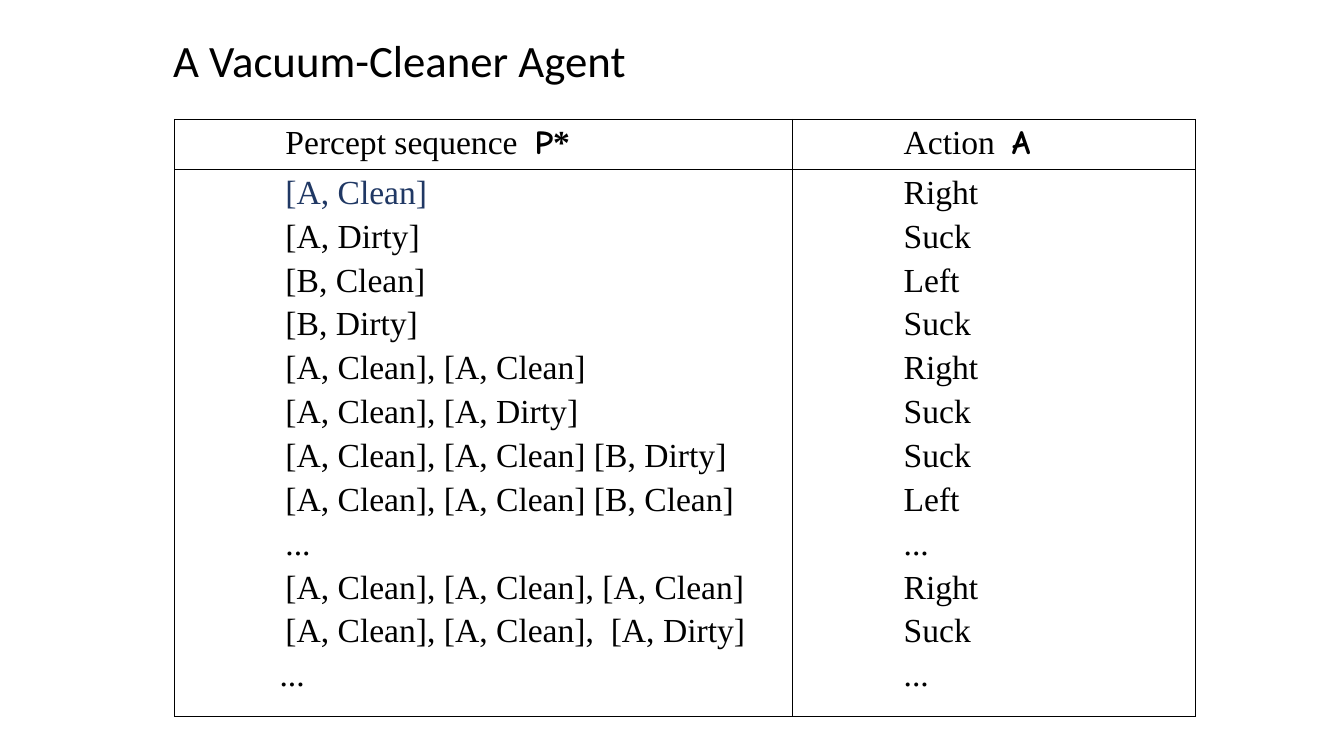
from lxml import etree
from pptx import Presentation
from pptx.dml.color import RGBColor
from pptx.enum.text import MSO_ANCHOR, PP_ALIGN
from pptx.oxml.ns import qn
from pptx.util import Cm, Pt

LEFT = PP_ALIGN.LEFT
MIDDLE = MSO_ANCHOR.MIDDLE
TITLE_ONLY = 5
COLORS = {"ink": "000000", "paper": "FFFFFF", "accent": "203864"}
SERIF, COMIC = "Times New Roman", "Comic Neue"
INDENT = 2.54
HEADINGS = [
    [("Percept sequence  ", SERIF, False), ("P", COMIC, True), ("*", SERIF, True)],
    [("Action  ", SERIF, False), ("A", COMIC, True)],
]
RULES = [
    ("[A, Clean]", "Right"),
    ("[A, Dirty]", "Suck"),
    ("[B, Clean]", "Left"),
    ("[B, Dirty]", "Suck"),
    ("[A, Clean], [A, Clean]", "Right"),
    ("[A, Clean], [A, Dirty]", "Suck"),
    ("[A, Clean], [A, Clean] [B, Dirty]", "Suck"),
    ("[A, Clean], [A, Clean] [B, Clean]", "Left"),
    ("...", "..."),
    ("[A, Clean], [A, Clean], [A, Clean]", "Right"),
    ("[A, Clean], [A, Clean],  [A, Dirty]", "Suck"),
    ("...", "..."),
]


def add_span(para, text, font=SERIF, size=24, color="ink", bold=False):
    """Append formatted text to a paragraph."""
    span = para.add_run()
    span.text = text
    span.font.name = font
    span.font.size = Pt(size)
    span.font.bold = bold
    span.font.color.rgb = RGBColor.from_string(COLORS[color])


def indent_paragraph(para, indent=INDENT):
    """Indent a table paragraph and set the gap below it."""
    para.alignment = LEFT
    para.space_after = Pt(4.8)
    properties = para._p.get_or_add_pPr()
    properties.set("marL", str(Cm(indent)))
    properties.set("indent", "0")


def frame_cell(cell):
    """Give a cell thin borders and a plain fill."""
    properties = cell._tc.get_or_add_tcPr()
    for side in ("lnL", "lnR", "lnT", "lnB"):
        line = etree.SubElement(properties, qn(f"a:{side}"), w=str(Pt(1)))
        fill = etree.SubElement(line, qn("a:solidFill"))
        etree.SubElement(fill, qn("a:srgbClr"), val=COLORS["ink"])
    cell.fill.solid()
    cell.fill.fore_color.rgb = RGBColor.from_string(COLORS["paper"])


def place_title(page, left, top, width, height):
    """Place the heading in the title placeholder."""
    title = page.shapes.title
    title.left, title.top = Cm(left), Cm(top)
    title.width, title.height = Cm(width), Cm(height)
    title.text_frame.vertical_anchor = MIDDLE
    para = title.text_frame.paragraphs[0]
    para.alignment = LEFT
    para.line_spacing = 0.9
    add_span(para, "A Vacuum-Cleaner Agent", font="Calibri", size=32)


def fill_rules(cell, lines, accent_first=False, last_indent=INDENT):
    """Write one paragraph per rule in a cell."""
    for index, text in enumerate(lines):
        frame = cell.text_frame
        para = frame.add_paragraph() if index else frame.paragraphs[0]
        indent_paragraph(para, last_indent if index == len(lines) - 1 else INDENT)
        add_span(para, text, color="accent" if accent_first and index == 0 else "ink")


def place_table(page, left, top, width, height):
    """Place the table from percept sequences to actions."""
    header_height, action_width = 1.26, 10.14
    box = page.shapes.add_table(2, 2, Cm(left), Cm(top), Cm(width), Cm(height))
    table = box.table
    table.first_row = table.horz_banding = False
    table.columns[0].width = Cm(width - action_width)
    table.columns[1].width = Cm(action_width)
    table.rows[0].height = Cm(header_height)
    table.rows[1].height = Cm(height - header_height)
    for cell in table.iter_cells():
        frame_cell(cell)
    for column, heading in enumerate(HEADINGS):
        para = table.cell(0, column).text_frame.paragraphs[0]
        indent_paragraph(para)
        for text, font, bold in heading:
            add_span(para, text, font=font, bold=bold)
    percepts, actions = zip(*RULES)
    fill_rules(table.cell(1, 0), percepts, accent_first=True, last_indent=2.39)
    fill_rules(table.cell(1, 1), actions)


def main():
    """Build and save the deck."""
    deck = Presentation()
    deck.slide_width, deck.slide_height = Cm(33.87), Cm(19.05)
    page = deck.slides.add_slide(deck.slide_layouts[TITLE_ONLY])
    place_title(page, 4.11, 0.23, 18.16, 2.72)
    place_table(page, 4.4, 3.01, 25.72, 15.05)
    deck.save("out.pptx")


if __name__ == "__main__":
    main()
